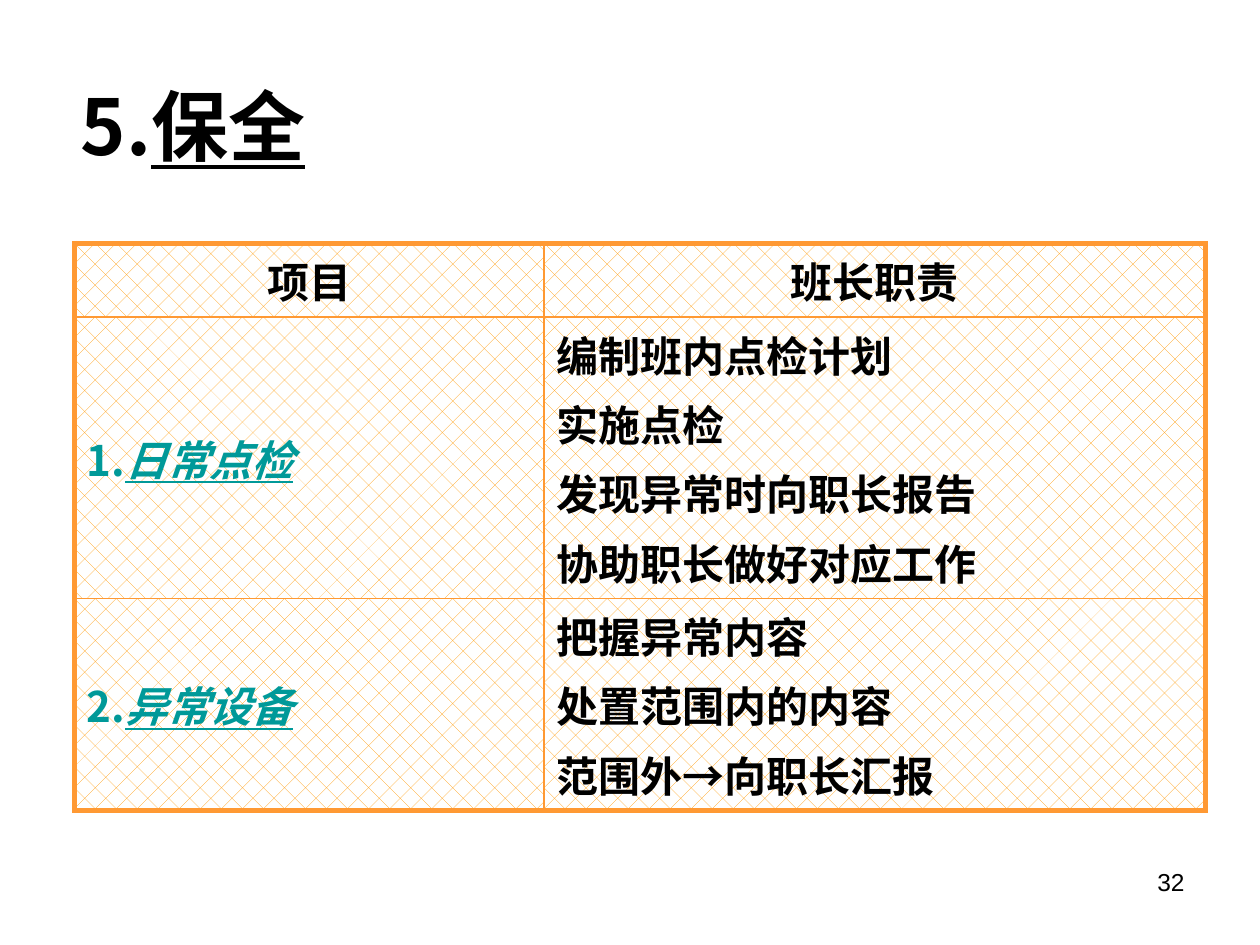
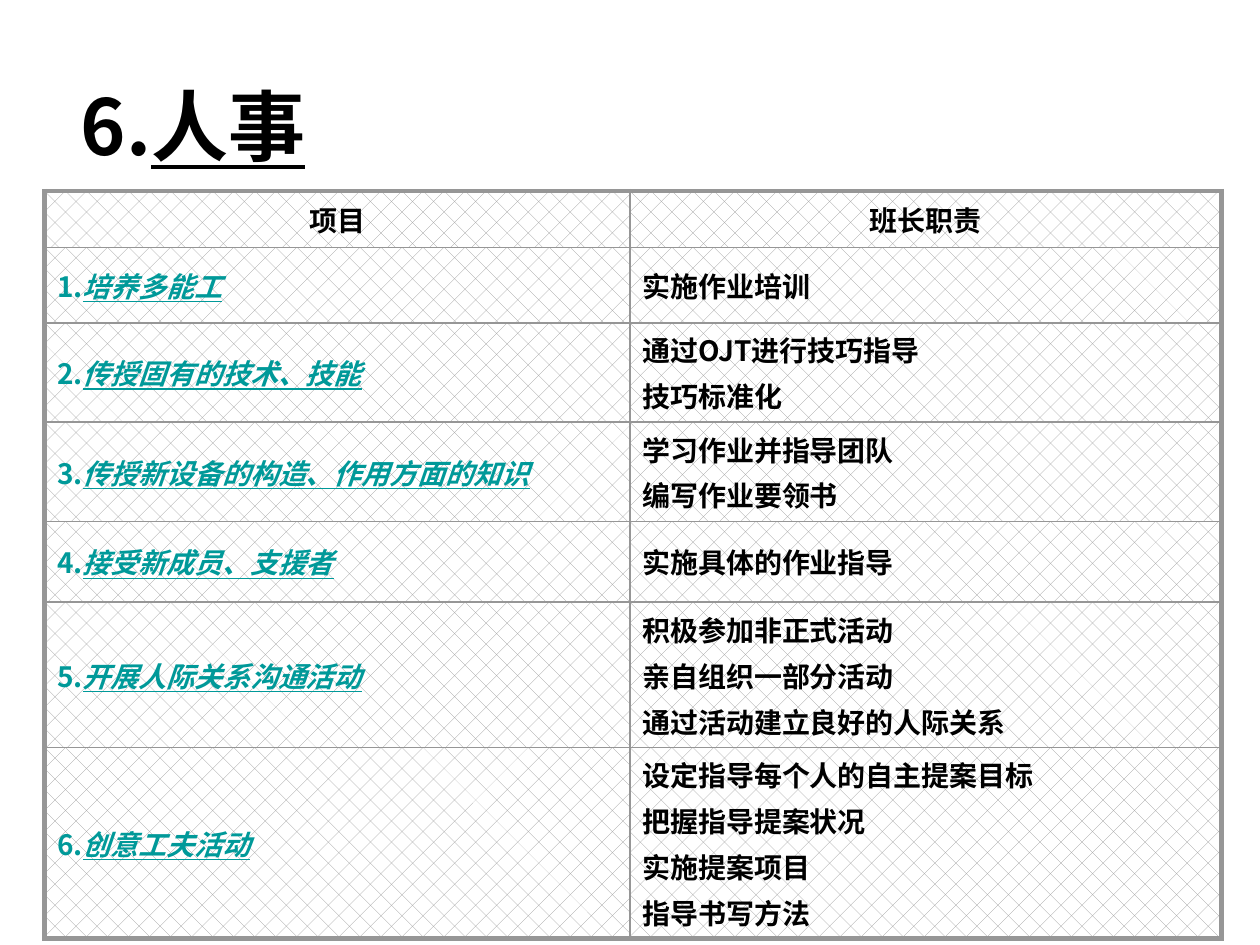
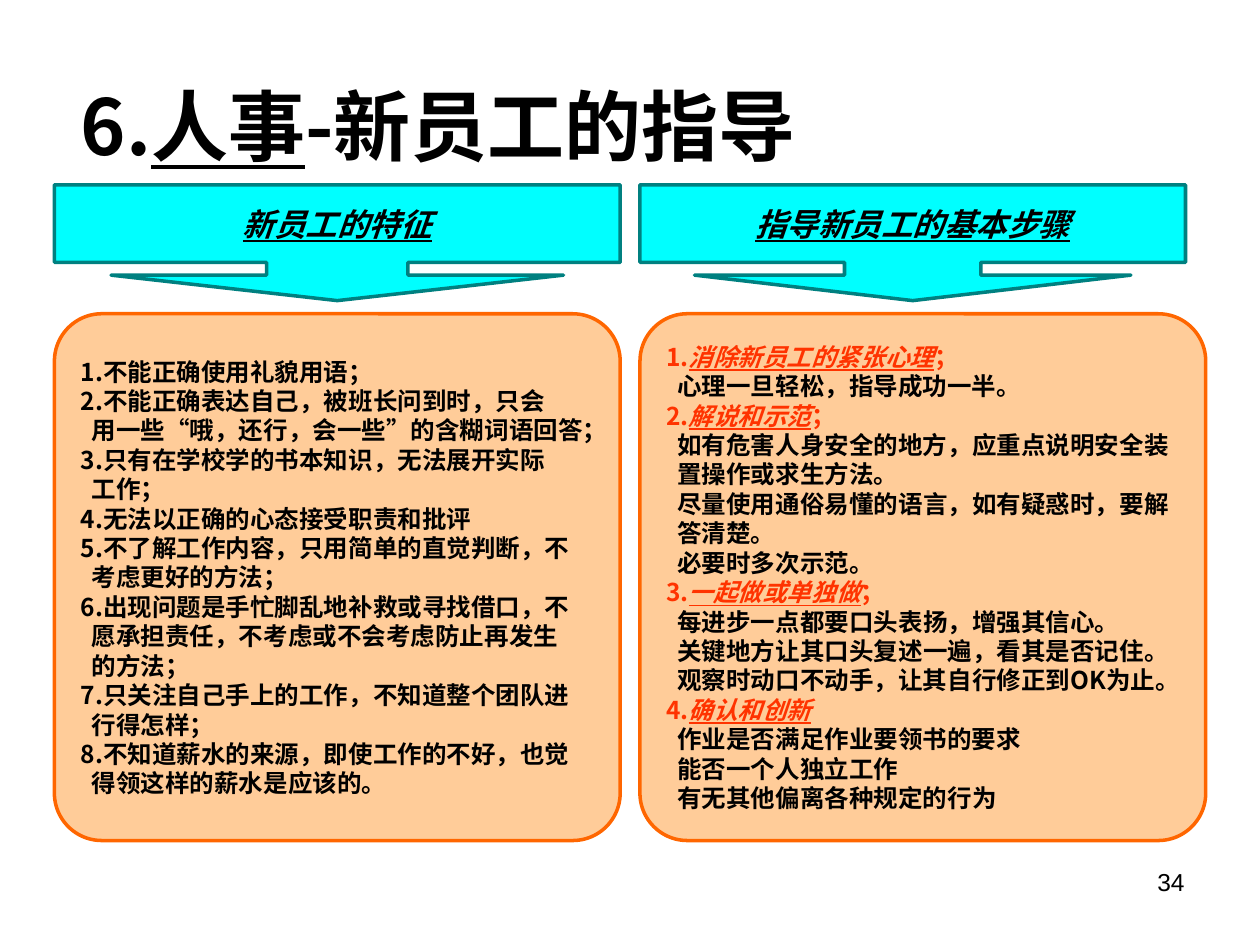
from dataclasses import dataclass

from lxml import etree
from pptx import Presentation
from pptx.dml.color import RGBColor
from pptx.enum.dml import MSO_PATTERN
from pptx.enum.shapes import MSO_SHAPE
from pptx.enum.text import MSO_ANCHOR, PP_ALIGN
from pptx.oxml.ns import qn
from pptx.util import Pt

LEFT, CENTER, RIGHT = PP_ALIGN.LEFT, PP_ALIGN.CENTER, PP_ALIGN.RIGHT
MIDDLE = MSO_ANCHOR.MIDDLE
DIAMONDS = MSO_PATTERN.DOTTED_DIAMOND
CALLOUT = MSO_SHAPE.DOWN_ARROW_CALLOUT
ROUNDED = MSO_SHAPE.ROUNDED_RECTANGLE


@dataclass(frozen=True)
class Theme:
    font: str = "Noto Sans CJK SC"
    plain_font: str = "Arial"
    ink: str = "000000"
    paper: str = "FFFFFF"
    item: str = "009999"
    step: str = "FF3300"
    orange_line: str = "FF9933"
    orange_hatch: str = "FF9900"
    grey: str = "969696"
    callout_fill: str = "00FFFF"
    callout_line: str = "008080"
    panel_fill: str = "FFCC99"
    panel_line: str = "FF6600"
    title_size: int = 44
    large_table_size: int = 24
    small_table_size: int = 16
    heading_size: int = 18
    body_size: int = 14
    outer_border: int = 3
    inner_border: int = 1
    shape_line: int = 2
    line_indent: float = 6.36


THEME = Theme()


@dataclass(frozen=True)
class Box:
    left: float
    top: float
    width: float
    height: float

    def lengths(self):
        return Pt(self.left), Pt(self.top), Pt(self.width), Pt(self.height)


@dataclass(frozen=True)
class Span:
    text: str
    color: str = THEME.ink
    bold: bool = True
    italic: bool = False
    underline: bool = False


TITLE_BOX = Box(39, 26, 672.5, 90)
NUMBER_BOX = Box(516.25, 492, 167.75, 37.5)

MAINTENANCE = [
    ("日常点检", ["编制班内点检计划", "实施点检", "发现异常时向职长报告", "协助职长做好对应工作"]),
    ("异常设备", ["把握异常内容", "处置范围内的内容", "范围外→向职长汇报"]),
]
PERSONNEL = [
    ("培养多能工", ["实施作业培训"]),
    ("传授固有的技术、技能", ["通过OJT进行技巧指导", "技巧标准化"]),
    ("传授新设备的构造、作用方面的知识", ["学习作业并指导团队", "编写作业要领书"]),
    ("接受新成员、支援者", ["实施具体的作业指导"]),
    ("开展人际关系沟通活动", ["积极参加非正式活动", "亲自组织一部分活动", "通过活动建立良好的人际关系"]),
    ("创意工夫活动", ["设定指导每个人的自主提案目标", "把握指导提案状况", "实施提案项目", "指导书写方法"]),
]
TRAITS = [
    ["不能正确使用礼貌用语；"],
    ["不能正确表达自己，被班长问到时，只会", "用一些“哦，还行，会一些”的含糊词语回答；"],
    ["只有在学校学的书本知识，无法展开实际", "工作；"],
    ["无法以正确的心态接受职责和批评"],
    ["不了解工作内容，只用简单的直觉判断，不", "考虑更好的方法；"],
    ["出现问题是手忙脚乱地补救或寻找借口，不", "愿承担责任，不考虑或不会考虑防止再发生", "的方法；"],
    ["只关注自己手上的工作，不知道整个团队进", "行得怎样；"],
    ["不知道薪水的来源，即使工作的不好，也觉", "得领这样的薪水是应该的。"],
]
STEPS = [
    ("消除新员工的紧张心理", "；", ["心理一旦轻松，指导成功一半。"]),
    ("解说和示范", "；", [
        "如有危害人身安全的地方，应重点说明安全装", "置操作或求生方法。",
        "尽量使用通俗易懂的语言，如有疑惑时，要解", "答清楚。", "必要时多次示范。"]),
    ("一起做或单独做", "；", [
        "每进步一点都要口头表扬，增强其信心。", "关键地方让其口头复述一遍，看其是否记住。",
        "观察时动口不动手，让其自行修正到OK为止。"]),
    ("确认和创新", "", ["作业是否满足作业要领书的要求", "能否一个人独立工作", "有无其他偏离各种规定的行为"]),
]


def rgb(color):
    return RGBColor.from_string(color)


def write_para(para, spans, size, align=LEFT, font=THEME.font, indent=0):
    para.alignment = align
    if indent:
        para._p.get_or_add_pPr().set("marL", str(Pt(indent)))
    for span in spans:
        run = para.add_run()
        run.text = span.text
        run.font.name = font
        run.font.size = Pt(size)
        run.font.bold = span.bold
        run.font.italic = span.italic
        run.font.underline = span.underline
        run.font.color.rgb = rgb(span.color)
        etree.SubElement(run._r.get_or_add_rPr(), qn("a:ea"), typeface=THEME.font)


def next_para(frame, index):
    return frame.add_paragraph() if index else frame.paragraphs[0]


def add_title(page, spans):
    frame = page.shapes.add_textbox(*TITLE_BOX.lengths()).text_frame
    frame.word_wrap = True
    frame.vertical_anchor = MIDDLE
    write_para(frame.paragraphs[0], spans, THEME.title_size)


def add_page_number(page, number):
    frame = page.shapes.add_textbox(*NUMBER_BOX.lengths()).text_frame
    frame.word_wrap = True
    write_para(frame.paragraphs[0], [Span(number, bold=False)], THEME.body_size,
               RIGHT, THEME.plain_font)


def set_borders(cell, color, outer_sides):
    """Draw all four borders, heavier on the sides at the table's edge."""
    properties = cell._tc.get_or_add_tcPr()
    for side in "LRTB":
        weight = THEME.outer_border if side in outer_sides else THEME.inner_border
        line = etree.SubElement(properties, qn(f"a:ln{side}"), w=str(Pt(weight)))
        fill = etree.SubElement(line, qn("a:solidFill"))
        etree.SubElement(fill, qn("a:srgbClr"), val=color)


def hatch(cell, color):
    cell.fill.patterned()
    cell.fill.pattern = DIAMONDS
    cell.fill.fore_color.rgb = rgb(color)
    cell.fill.back_color.rgb = rgb(THEME.paper)


def add_duty_table(page, box, item_width, row_heights, duties, size, line, hatch_color):
    rows = [([[Span("项目")]], [[Span("班长职责")]])]
    for number, (item, tasks) in enumerate(duties, 1):
        label = [Span(f"{number}.", THEME.item),
                 Span(item, THEME.item, italic=True, underline=True)]
        rows.append(([label], [[Span(task)] for task in tasks]))

    table = page.shapes.add_table(len(rows), 2, *box.lengths()).table
    table.first_row = table.horz_banding = False
    table.columns[0].width = Pt(item_width)
    table.columns[1].width = Pt(box.width - item_width)
    for row, (height, contents) in enumerate(zip(row_heights, rows)):
        table.rows[row].height = Pt(height)
        edges = "T" * (row == 0) + "B" * (row == len(rows) - 1)
        for column, paras in enumerate(contents):
            cell = table.cell(row, column)
            set_borders(cell, line, edges + "LR"[column])
            hatch(cell, hatch_color)
            cell.vertical_anchor = MIDDLE
            for index, spans in enumerate(paras):
                para = next_para(cell.text_frame, index)
                if index:
                    para.space_before = Pt(0.2 * size)
                write_para(para, spans, size, LEFT if row else CENTER)


def add_filled_shape(page, kind, box, fill, line):
    shape = page.shapes.add_shape(kind, *box.lengths())
    shape.shadow.inherit = False
    shape.fill.solid()
    shape.fill.fore_color.rgb = rgb(fill)
    shape.line.color.rgb = rgb(line)
    shape.line.width = Pt(THEME.shape_line)
    shape.text_frame.vertical_anchor = MIDDLE
    return shape


def add_callout(page, box, heading):
    shape = add_filled_shape(page, CALLOUT, box, THEME.callout_fill, THEME.callout_line)
    ratio = box.width / box.height
    for index, value in enumerate((ratio / 4, ratio * 0.4, 0.22, 0.67)):
        shape.adjustments[index] = value
    shape.text_frame.word_wrap = False
    write_para(shape.text_frame.paragraphs[0],
               [Span(heading, italic=True, underline=True)],
               THEME.heading_size, CENTER, THEME.plain_font)


def add_panel(page, box, entries):
    """Write entries of (head spans, indented lines) in a rounded box."""
    shape = add_filled_shape(page, ROUNDED, box, THEME.panel_fill, THEME.panel_line)
    shape.adjustments[0] = 0.09
    frame = shape.text_frame
    frame.word_wrap = True
    frame.margin_right = Pt(2.88)
    paras = []
    for head, lines in entries:
        paras.append((head, 0))
        paras += [([Span(line)], THEME.line_indent) for line in lines]
    for index, (spans, indent) in enumerate(paras):
        write_para(next_para(frame, index), spans, THEME.body_size, indent=indent)


def trait_entries():
    return [([Span(f"{number}.{first}")], rest)
            for number, (first, *rest) in enumerate(TRAITS, 1)]


def step_entries():
    entries = []
    for number, (name, ending, lines) in enumerate(STEPS, 1):
        head = [Span(f"{number}.", THEME.step),
                Span(name, THEME.step, italic=True, underline=True)]
        if ending:
            head.append(Span(ending, THEME.step))
        entries.append((head, lines))
    return entries


def add_guidance_column(page, box, callout_width, heading, entries):
    callout_height, panel_top = 66.2, 73.7
    add_callout(page, Box(box.left, box.top, callout_width, callout_height), heading)
    add_panel(page, Box(box.left, box.top + panel_top, box.width,
                        box.height - panel_top), entries)


def main():
    deck = Presentation()
    deck.slide_width, deck.slide_height = Pt(720), Pt(540)
    maintenance, personnel, guidance = (
        deck.slides.add_slide(deck.slide_layouts[6]) for _ in range(3))

    add_page_number(maintenance, "32")
    add_title(maintenance, [Span("5."), Span("保全", underline=True)])
    add_duty_table(maintenance, Box(42.5, 139, 646.5, 324.2), 268.5, [42.2, 160.9, 121.1],
                   MAINTENANCE, THEME.large_table_size, THEME.orange_line,
                   THEME.orange_hatch)

    personnel_title = [Span("6."), Span("人事", underline=True)]
    add_title(personnel, personnel_title)
    add_duty_table(personnel, Box(25.5, 109.2, 672.5, 427.1), 334.5,
                   [32.2, 43.2, 56.7, 56.7, 46.2, 83.1, 109],
                   PERSONNEL, THEME.small_table_size, THEME.grey, THEME.grey)

    add_page_number(guidance, "34")
    add_title(guidance, personnel_title + [Span("-新员工的指导")])
    add_guidance_column(guidance, Box(31.1, 105.6, 323.3, 374.7), 323.3,
                        "新员工的特征", trait_entries())
    add_guidance_column(guidance, Box(365.7, 105.6, 323.3, 374.7), 311.75,
                        "指导新员工的基本步骤", step_entries())
    deck.save("out.pptx")


if __name__ == "__main__":
    main()
